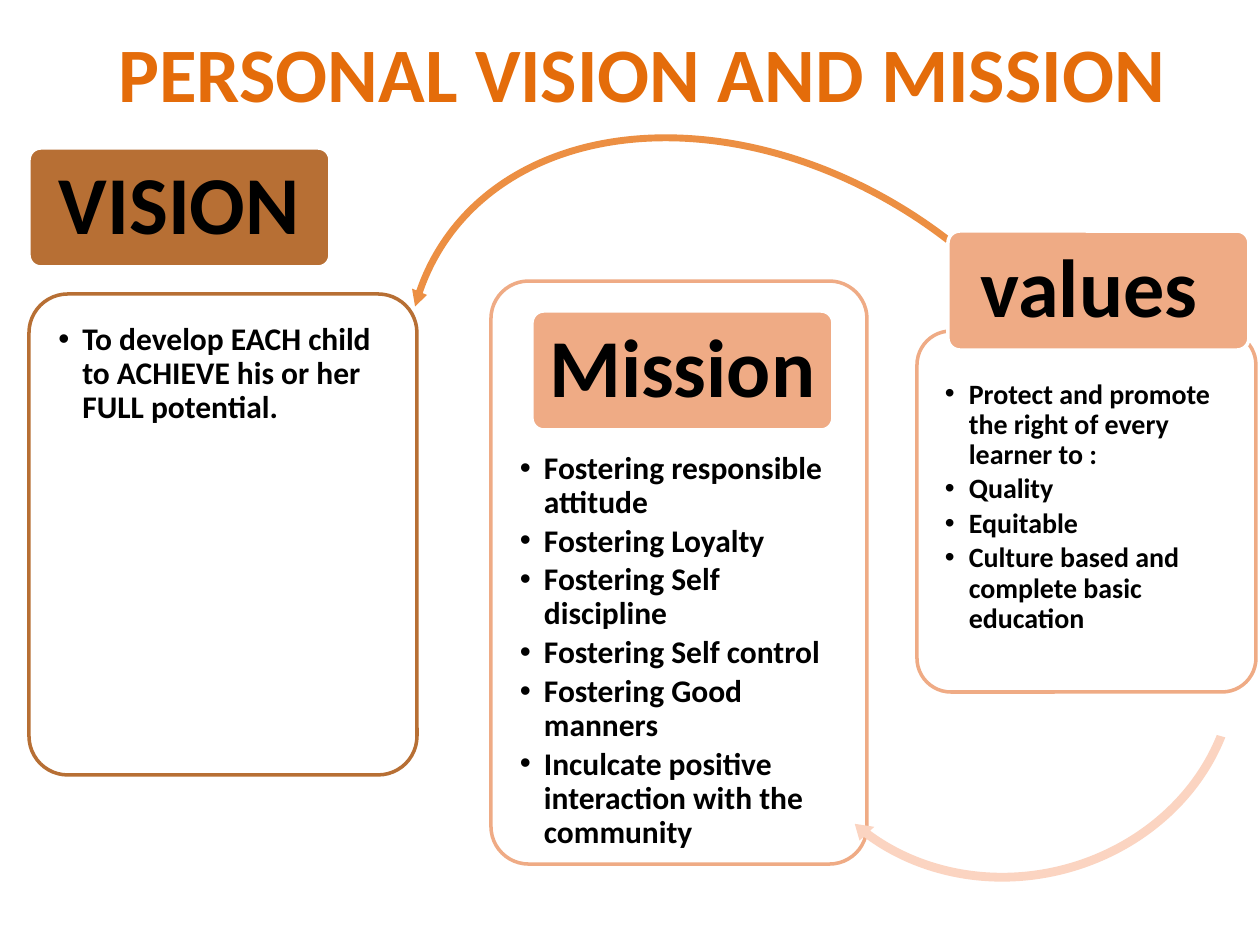
import pptx
import pptx.dml.color
import pptx.enum.shapes
import pptx.enum.text
import pptx.oxml.ns
import pptx.util
from lxml import etree

PX = 914400 / 126
FONT = "Calibri"
COLORS = {
    "title": "E46C0A",
    "text": "000000",
    "paper": "FFFFFF",
    "brown": "B76F34",
    "peach": "EFAB85",
    "orange": "EC8F43",
    "blush": "FBD4C1",
}
SHAPES = pptx.enum.shapes.MSO_SHAPE
ALIGN = pptx.enum.text.PP_ALIGN
ANCHOR = pptx.enum.text.MSO_ANCHOR


def px(length):
    return pptx.util.Emu(round(length * PX))


def rgb(name):
    return pptx.dml.color.RGBColor.from_string(COLORS[name])


def add_element(parent, tag, **attributes):
    return etree.SubElement(parent, pptx.oxml.ns.qn(tag), **attributes)


def add_figure(slide, kind, box, fill, line=None):
    figure = slide.shapes.add_shape(kind, *map(px, box))
    figure.shadow.inherit = False
    figure.fill.solid()
    figure.fill.fore_color.rgb = rgb(fill)
    if line:
        figure.line.color.rgb = rgb(line)
        figure.line.width = pptx.util.Pt(2)
    else:
        figure.line.fill.background()
    return figure


def set_frame(figure, anchor, left, top, right, bottom):
    frame = figure.text_frame
    frame.word_wrap = True
    frame.vertical_anchor = anchor
    frame.margin_left, frame.margin_top = px(left), px(top)
    frame.margin_right, frame.margin_bottom = px(right), px(bottom)
    return frame


def set_paragraph(paragraph, text, size, align, color="text"):
    paragraph.text = text
    paragraph.alignment = align
    paragraph.font.name = FONT
    paragraph.font.size = pptx.util.Pt(size)
    paragraph.font.bold = True
    paragraph.font.color.rgb = rgb(color)


def add_title(slide, box, text):
    title = slide.shapes.add_textbox(*map(px, box))
    frame = set_frame(title, ANCHOR.MIDDLE, 13, 6, 13, 6)
    set_paragraph(frame.paragraphs[0], text, 44, ALIGN.CENTER, "title")


def add_panel(slide, box, outline, items, size, text_top):
    panel = add_figure(slide, SHAPES.ROUNDED_RECTANGLE, box, "paper", outline)
    panel.adjustments[0] = 0.1
    fill_color = panel.fill._xPr.find(".//" + pptx.oxml.ns.qn("a:srgbClr"))
    add_element(fill_color, "a:alpha", val="90000")
    frame = set_frame(panel, ANCHOR.TOP, 18, text_top, 18, 18)
    for index, item in enumerate(items):
        paragraph = frame.add_paragraph() if index else frame.paragraphs[0]
        properties = paragraph._p.get_or_add_pPr()
        properties.set("marL", str(px(24)))
        properties.set("indent", str(px(-24)))
        add_element(properties, "a:buFont", typeface="Arial")
        add_element(properties, "a:buChar", char="•")
        set_paragraph(paragraph, item, size, ALIGN.LEFT)
        paragraph.line_spacing = 0.9
        paragraph.space_after = pptx.util.Pt(size * 0.15)


def add_tag(slide, left, top, fill, text):
    tag = add_figure(slide, SHAPES.ROUNDED_RECTANGLE,
                     (left, top, 301, 119), fill, "paper")
    tag.adjustments[0] = 0.1
    frame = set_frame(tag, ANCHOR.MIDDLE, 12, 8, 12, 8)
    set_paragraph(frame.paragraphs[0], text, 47, ALIGN.CENTER)
    frame.paragraphs[0].line_spacing = 0.9


def add_arc(slide, kind, box, rotation, fill, adjustments):
    arc = add_figure(slide, kind, box, fill)
    arc.rotation = rotation
    for index, thousandths in enumerate(adjustments):
        arc.adjustments[index] = thousandths / 1000


def add_vision(slide, left, top):
    add_panel(slide, (left, top + 146, 388, 481), "brown",
              ["To develop EACH child to ACHIEVE his or her FULL potential."],
              18, 18)
    add_arc(slide, SHAPES.LEFT_CIRCULAR_ARROW,
            (left + 442, top - 84, 582, 781), 123.6, "orange",
            (12, 1385, 49082, 120187, 14))
    add_tag(slide, left, top, "brown", "VISION")


def add_mission(slide, left, top):
    add_panel(slide, (left, top, 376, 583), "peach", [
        "Fostering responsible attitude",
        "Fostering Loyalty",
        "Fostering Self discipline",
        "Fostering Self control",
        "Fostering Good manners",
        "Inculcate positive interaction with the community",
    ], 18, 160)
    add_arc(slide, SHAPES.CIRCULAR_ARROW,
            (left + 289, top + 185, 466, 420), 166.5, "blush",
            (21, 2487, 195788, 125785, 24))
    add_tag(slide, left + 41, top + 30, "peach", "Mission ")


def add_values(slide, left, top):
    add_panel(slide, (left, top + 100, 339, 361), "peach", [
        "Protect and promote the right of every learner to :",
        "Quality",
        "Equitable",
        "Culture based and complete basic education",
    ], 16, 39)
    add_tag(slide, left + 31, top, "peach", "values ")


def main():
    deck = pptx.Presentation()
    deck.slide_width, deck.slide_height = px(1260), px(945)
    slide = deck.slides.add_slide(deck.slide_layouts[6])
    add_title(slide, (25, 0, 1235, 144), "PERSONAL VISION AND MISSION")
    add_vision(slide, 29, 148)
    add_mission(slide, 491, 281)
    add_values(slide, 917, 231)
    deck.save("out.pptx")


if __name__ == "__main__":
    main()
